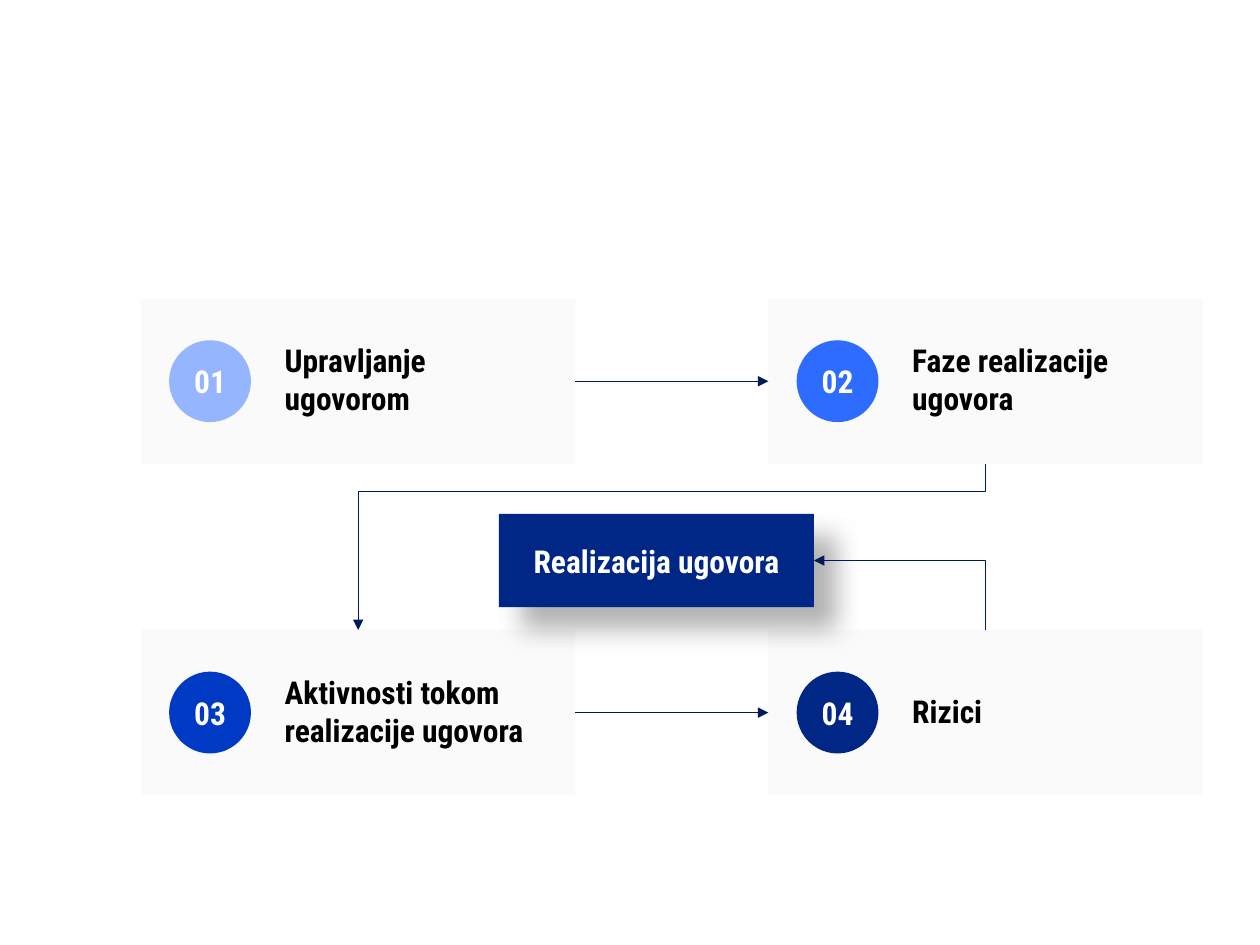
from lxml import etree
from pptx import Presentation
from pptx import util as u
from pptx.dml.color import RGBColor
from pptx.enum import shapes, text
from pptx.oxml.ns import qn

FONT = "Roboto Condensed"
NAVY = "002786"
CARD_W, CARD_H = 8.76, 3.33
COLUMNS = 2.84, 15.49
ROWS = 6.02, 12.7
BADGE = 1.65
LABEL_W, LABEL_H = 5.72, 1.98
GOAL = 10.06, 10.36, 6.35, 1.88
STEPS = [
    ("01", "Upravljanje ugovorom", "96B5FF"),
    ("02", "Faze realizacije ugovora", "2E6BFF"),
    ("03", "Aktivnosti tokom realizacije ugovora", "003AC4"),
    ("04", "Rizici", NAVY),
]


def rgb(value):
    """Return the colour for a hex string."""
    return RGBColor.from_string(value)


def add_xml(parent, tag, **attributes):
    """Append a DrawingML element and return it."""
    values = {key: str(value) for key, value in attributes.items()}
    return etree.SubElement(parent, qn(tag), values)


def write(shape, words, colour, align):
    """Put one bold, vertically centred run into a shape."""
    frame = shape.text_frame
    frame.word_wrap = True
    frame.vertical_anchor = text.MSO_ANCHOR.MIDDLE
    frame.margin_left = frame.margin_right = u.Cm(0.25)
    frame.margin_top = frame.margin_bottom = u.Cm(0.25)
    paragraph = frame.paragraphs[0]
    paragraph.alignment = align
    run = paragraph.add_run()
    run.text = words
    run.font.name = FONT
    run.font.size = u.Pt(18)
    run.font.bold = True
    run.font.color.rgb = rgb(colour)


def add_block(parent, kind, box, colour):
    """Add a plain filled shape without outline or shadow."""
    block = parent.shapes.add_shape(kind, *map(u.Cm, box))
    block.fill.solid()
    block.fill.fore_color.rgb = rgb(colour)
    block.line.fill.background()
    block.shadow.inherit = False
    return block


def add_card(slide, left, top):
    """Add a translucent grey card."""
    card = add_block(slide, shapes.MSO_SHAPE.RECTANGLE, (left, top, CARD_W, CARD_H), "D9D9D9")
    tint = card.fill._xPr.find(".//" + qn("a:srgbClr"))
    add_xml(tint, "a:alpha", val=13000)
    return card


def add_step(slide, left, top, number, words, colour):
    """Add a numbered badge and its label as one group."""
    step = slide.shapes.add_group_shape()
    label_box = left + 2.65, top + (CARD_H - LABEL_H) / 2 - 0.04, LABEL_W, LABEL_H
    label = step.shapes.add_textbox(*map(u.Cm, label_box))
    write(label, words, "000000", text.PP_ALIGN.LEFT)
    badge_box = left + 0.57, top + (CARD_H - BADGE) / 2, BADGE, BADGE
    badge = add_block(step, shapes.MSO_SHAPE.OVAL, badge_box, colour)
    write(badge, number, "FFFFFF", text.PP_ALIGN.CENTER)


def add_goal(slide):
    """Add the central box with its soft shadow."""
    goal = add_block(slide, shapes.MSO_SHAPE.RECTANGLE, GOAL, NAVY)
    write(goal, "Realizacija ugovora", "FFFFFF", text.PP_ALIGN.CENTER)
    effects = goal._element.spPr.find(qn("a:effectLst"))
    shadow = add_xml(effects, "a:outerShdw", blurRad=u.Pt(15), dist=u.Pt(18),
                     dir=45 * 60000, algn="bl", rotWithShape=0)
    tint = add_xml(shadow, "a:srgbClr", val="000000")
    add_xml(tint, "a:alpha", val=30000)


def add_arrow(slide, kind, start, end, arrow_end="a:tailEnd"):
    """Add a thin connector with one arrowhead."""
    arrow = slide.shapes.add_connector(kind, *map(u.Cm, start + end))
    arrow.line.width = u.Pt(0.75)
    arrow.line.color.rgb = rgb("001B5C")
    add_xml(arrow.line._get_or_add_ln(), arrow_end, type="triangle")
    add_xml(arrow._element.spPr, "a:effectLst")
    return arrow


def join_row(slide, first, second):
    """Join two neighbouring cards with a straight arrow."""
    arrow = add_arrow(slide, shapes.MSO_CONNECTOR.STRAIGHT, (0, 0), (1, 1))
    arrow.begin_connect(first, 3)
    arrow.end_connect(second, 1)


def join_rows(slide):
    """Lead from the second card down to the third."""
    start_x, end_x = COLUMNS[1] + CARD_W / 2, COLUMNS[0] + CARD_W / 2
    start_y, end_y = ROWS[0] + CARD_H, ROWS[1]
    width, height = end_y - start_y, start_x - end_x
    left = (start_x + end_x - width) / 2
    top = (start_y + end_y - height) / 2
    arrow = add_arrow(slide, shapes.MSO_CONNECTOR.ELBOW, (left, top),
                      (left + width, top + height))
    properties = arrow._element.spPr
    properties.find(qn("a:xfrm")).set("rot", str(90 * 60000))
    guides = properties.find(qn("a:prstGeom")).find(qn("a:avLst"))
    add_xml(guides, "a:gd", name="adj1", fmla="val 16600")


def join_goal(slide):
    """Lead from the fourth card up to the central box."""
    left, top, width, height = GOAL
    arrow = add_arrow(slide, shapes.MSO_CONNECTOR.ELBOW, (left + width, top + height / 2),
                      (COLUMNS[1] + CARD_W / 2, ROWS[1]), "a:headEnd")
    arrow._element.spPr.find(qn("a:prstGeom")).set("prst", "bentConnector2")


def main():
    """Build the contract overview slide."""
    deck = Presentation()
    deck.slide_width, deck.slide_height = u.Cm(25.4), u.Cm(19.05)
    slide = deck.slides.add_slide(deck.slide_layouts[6])
    places = [(left, top) for top in ROWS for left in COLUMNS]
    cards = [add_card(slide, *place) for place in places]
    for place, step in zip(places, STEPS):
        add_step(slide, *place, *step)
    add_goal(slide)
    join_goal(slide)
    join_row(slide, cards[2], cards[3])
    join_rows(slide)
    join_row(slide, cards[0], cards[1])
    deck.save("out.pptx")


if __name__ == "__main__":
    main()
